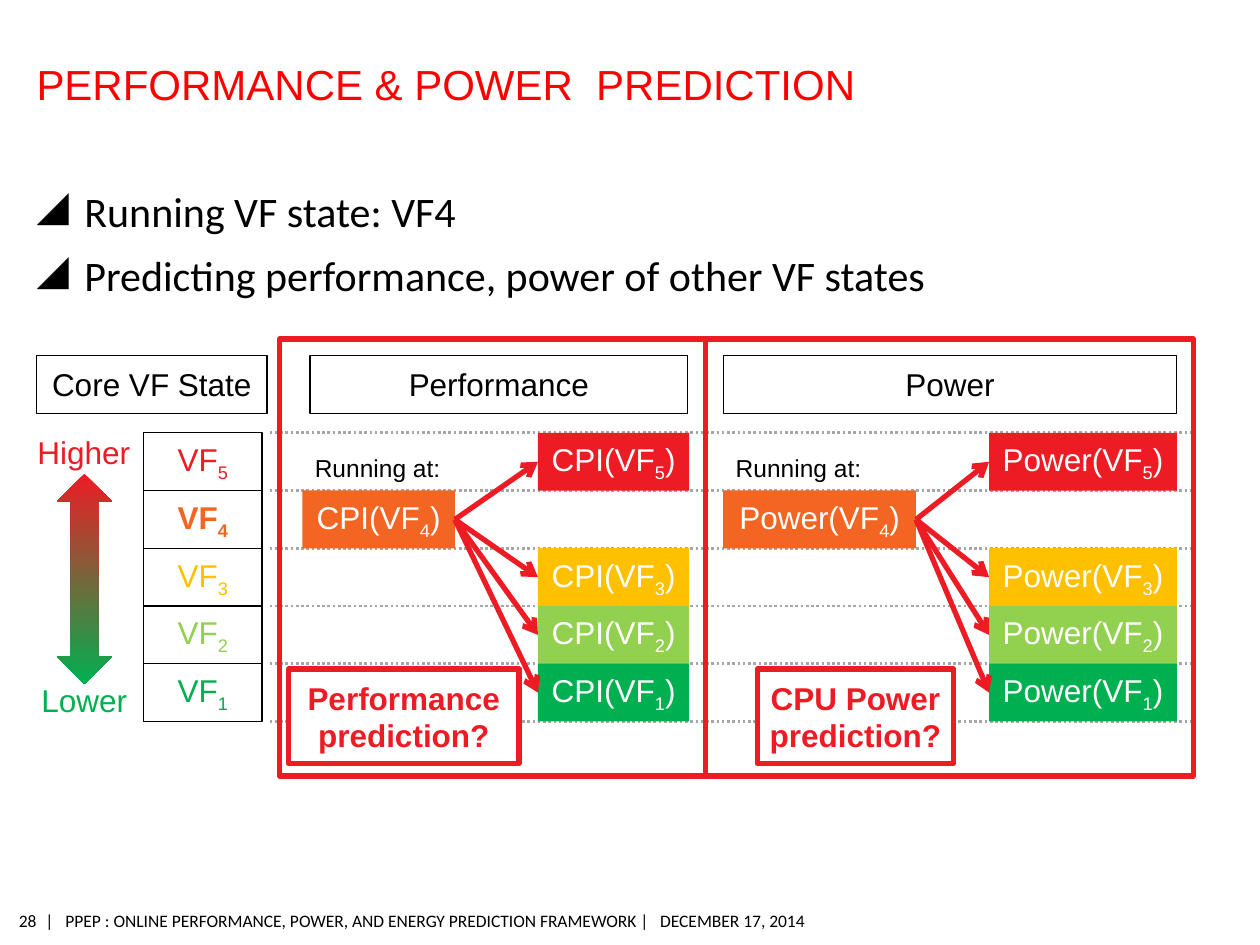
from lxml import etree
from pptx import Presentation
from pptx.dml.color import RGBColor
from pptx.enum.dml import MSO_LINE
from pptx.enum.shapes import MSO_CONNECTOR, MSO_SHAPE
from pptx.enum.text import MSO_ANCHOR, PP_ALIGN
from pptx.oxml.ns import qn
from pptx.util import Inches, Pt

RECTANGLE, DOUBLE_ARROW = MSO_SHAPE.RECTANGLE, MSO_SHAPE.UP_DOWN_ARROW
STRAIGHT, DOTTED = MSO_CONNECTOR.STRAIGHT, MSO_LINE.ROUND_DOT
LEFT, CENTER, RIGHT = PP_ALIGN.LEFT, PP_ALIGN.CENTER, PP_ALIGN.RIGHT
TOP, MIDDLE, BOTTOM = MSO_ANCHOR.TOP, MSO_ANCHOR.MIDDLE, MSO_ANCHOR.BOTTOM
LEFT_SIDE, RIGHT_SIDE = 1, 3

COLORS = {
    "title": "FF0000", "black": "000000", "white": "FFFFFF", "dots": "A6A6A6",
    "red": "ED1C24", "orange": "F26522", "yellow": "FFC000",
    "lime": "92D050", "green": "00B050",
}
# States from the highest to the lowest; one grid row each
STATES = [(5, "red"), (4, "orange"), (3, "yellow"), (2, "lime"), (1, "green")]
RUNNING = 4

# The slide is a grid of 100 columns by 75 rows
COLUMNS, ROWS = 100, 75
STATE_TOP, STATE_STEP, BOX_HEIGHT = 34.35, 4.58, 4.6
HEADER_TOP, FRAME_TOP, FRAME_HEIGHT = 28.2, 26.9, 34.7


def rgb(name):
    return RGBColor.from_string(COLORS[name])


def state_top(index):
    return STATE_TOP + index * STATE_STEP


def write(shape, text, size=18, font="Arial", color="black", bold=False,
          align=CENTER, anchor=MIDDLE, insets=(0.1, 0.05), spacing=None,
          gap=0, bullet=None, tabs=()):
    """Write lines of text; the character after "_" becomes a subscript."""
    frame = shape.text_frame
    frame.word_wrap = True
    frame.vertical_anchor = anchor
    frame.margin_left = frame.margin_right = Inches(insets[0])
    frame.margin_top = frame.margin_bottom = Inches(insets[1])
    for number, line in enumerate(text.split("\n")):
        paragraph = frame.add_paragraph() if number else frame.paragraphs[0]
        paragraph.alignment = align
        if spacing:
            paragraph.line_spacing = spacing
        if number and gap:
            paragraph.space_before = Pt(gap)
        properties = paragraph._p.get_or_add_pPr()
        if bullet:
            properties.set("marL", str(Inches(0.38)))
            properties.set("indent", str(-Inches(0.38)))
            bullet_color = etree.SubElement(properties, qn("a:buClr"))
            etree.SubElement(bullet_color, qn("a:srgbClr"), val=COLORS[color])
            etree.SubElement(properties, qn("a:buChar"), char=bullet)
        if tabs:
            tab_list = etree.SubElement(properties, qn("a:tabLst"))
            for position in tabs:
                etree.SubElement(tab_list, qn("a:tab"),
                                 pos=str(Inches(position)), algn="l")
        base, _, rest = line.partition("_")
        for part, lowered in ((base, False), (rest[:1], True), (rest[1:], False)):
            if not part:
                continue
            run = paragraph.add_run()
            run.text = part
            run.font.size, run.font.name = Pt(size), font
            run.font.bold = bold
            run.font.color.rgb = rgb(color)
            if lowered:
                run._r.get_or_add_rPr().set("baseline", "-25000")


class SlideBuilder:
    def __init__(self, presentation):
        self.slide = presentation.slides.add_slide(presentation.slide_layouts[6])
        self.column = presentation.slide_width / COLUMNS
        self.row = presentation.slide_height / ROWS

    def place(self, left, top, width, height):
        return (round(left * self.column), round(top * self.row),
                round(width * self.column), round(height * self.row))

    def text(self, area, text, **style):
        box = self.slide.shapes.add_textbox(*self.place(*area))
        write(box, text, **style)

    def box(self, area, text="", fill=None, line=None, weight=0.75,
            kind=RECTANGLE, **style):
        shape = self.slide.shapes.add_shape(kind, *self.place(*area))
        shape.shadow.inherit = False
        if fill:
            shape.fill.solid()
            shape.fill.fore_color.rgb = rgb(fill)
        else:
            shape.fill.background()
        if line:
            shape.line.color.rgb = rgb(line)
            shape.line.width = Pt(weight)
        else:
            shape.line.fill.background()
        if text:
            write(shape, text, **style)
        return shape

    def gradient_arrow(self, area, *colors):
        shape = self.box(area, kind=DOUBLE_ARROW)
        shape.fill.gradient()
        shape.fill.gradient_angle = 270
        for stop, color in zip(shape.fill.gradient_stops, colors):
            stop.color.rgb = rgb(color)

    def line(self, start, end, color, weight):
        left, top, right, bottom = self.place(*start, *end)
        connector = self.slide.shapes.add_connector(STRAIGHT, left, top, right, bottom)
        connector.line.color.rgb = rgb(color)
        connector.line.width = Pt(weight)
        etree.SubElement(connector._element.spPr, qn("a:effectLst"))
        return connector

    def dotted(self, top):
        self.line((21.4, top), (94.9, top), "dots", 1.5).line.dash_style = DOTTED

    def arrow(self, source, target):
        connector = self.line((0, 0), (1, 1), "red", 3)
        connector.begin_connect(source, RIGHT_SIDE)
        connector.end_connect(target, LEFT_SIDE)
        etree.SubElement(connector.line._get_or_add_ln(), qn("a:tailEnd"), type="arrow")

    def header(self, left, width, text):
        self.box((left, HEADER_TOP, width, BOX_HEIGHT), text, fill="white", line="black")

    def panel(self, title, measure, question, frame, header, running, targets, callout):
        """One predicted quantity; each span is (left, width)."""
        self.box((frame[0], FRAME_TOP, frame[1], FRAME_HEIGHT), line="red", weight=3)
        self.header(*header, title)
        self.text((running[0], 35.75, 15.2, 3.1), "Running at:", size=14,
                  align=LEFT, spacing=0.9)
        self.box((callout[0], 53.1, callout[1], 7.5), question, fill="white",
                 line="red", weight=3, color="red", bold=True)
        boxes = {}
        for index, (state, color) in enumerate(STATES):
            left, width = running if state == RUNNING else targets
            boxes[state] = self.box((left, state_top(index), width, BOX_HEIGHT),
                                    f"{measure}(VF_{state})", fill=color, color="white")
        source = boxes.pop(RUNNING)
        for target in boxes.values():
            self.arrow(source, target)


def main():
    presentation = Presentation()
    presentation.slide_width, presentation.slide_height = Inches(10), Inches(7.5)
    builder = SlideBuilder(presentation)

    # Title and bullets
    builder.text((2.9, 3.4, 84, 5.2), "PERFORMANCE & POWER  PREDICTION", size=24,
                 color="title", align=LEFT, anchor=BOTTOM, insets=(0, 0))
    builder.text((2.9, 14.2, 94, 55),
                 "Running VF state: VF4\nPredicting performance, power of other VF states",
                 size=24, font="Calibri", align=LEFT, anchor=TOP, insets=(0, 0.05),
                 gap=8, bullet="◢")

    # State column and row lines
    builder.header(2.9, 18.3, "Core VF State")
    for index, (state, color) in enumerate(STATES):
        builder.box((11.4, state_top(index), 9.4, BOX_HEIGHT), f"VF_{state}",
                    fill="white", line="black", color=color, bold=state == RUNNING)
    for index in range(len(STATES) + 1):
        builder.dotted(state_top(index))

    # Scale from higher to lower
    builder.text((1.4, 34.2, 10.5, 3.7), "Higher", color="red", spacing=0.9)
    builder.gradient_arrow((4.5, 37.6, 4.4, 16.7), "red", "green")
    builder.text((1.7, 53.9, 10, 3.7), "Lower", color="green", spacing=0.9)

    # Prediction panels
    builder.panel("Performance", "CPI", "Performance prediction?",
                  frame=(22.2, 33.8), header=(24.6, 30), running=(24, 12.1),
                  targets=(42.7, 12), callout=(22.9, 18.3))
    builder.panel("Power", "Power", "CPU Power prediction?",
                  frame=(56, 38.7), header=(57.4, 36), running=(57.4, 15.3),
                  targets=(78.5, 14.9), callout=(60.1, 15.6))

    # Footer
    footer = {"size": 10, "font": "Calibri", "insets": (0, 0.04)}
    builder.text((1.3, 71.8, 1.6, 2.6), "28", align=RIGHT, **footer)
    builder.text((3.6, 71.8, 61.1, 2.6),
                 "|\tPPEP : ONLINE PERFORMANCE, POWER, AND ENERGY PREDICTION FRAMEWORK |"
                 "\tDECEMBER 17, 2014", align=LEFT, tabs=(0.16, 4.88), **footer)

    presentation.save("out.pptx")


if __name__ == "__main__":
    main()
